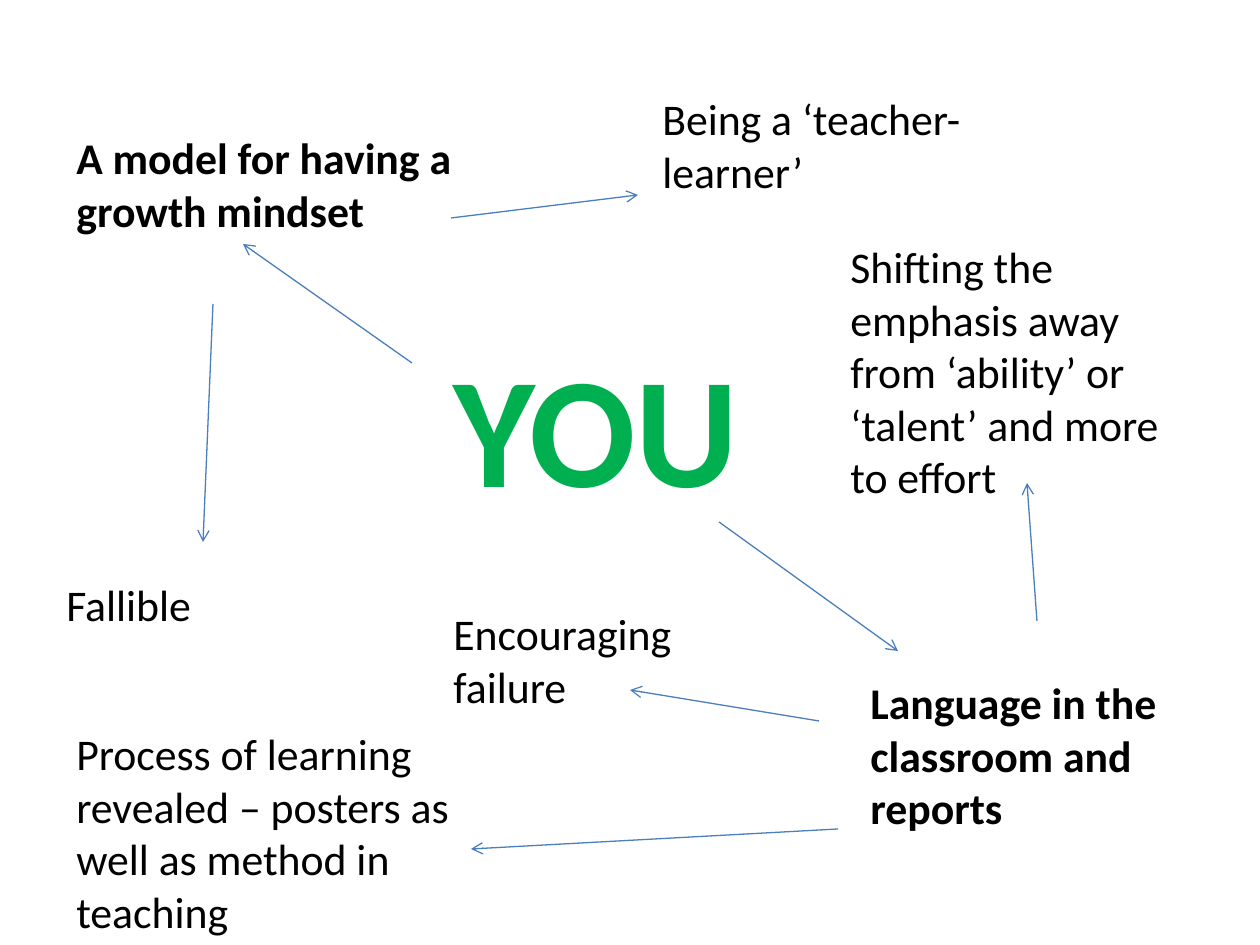
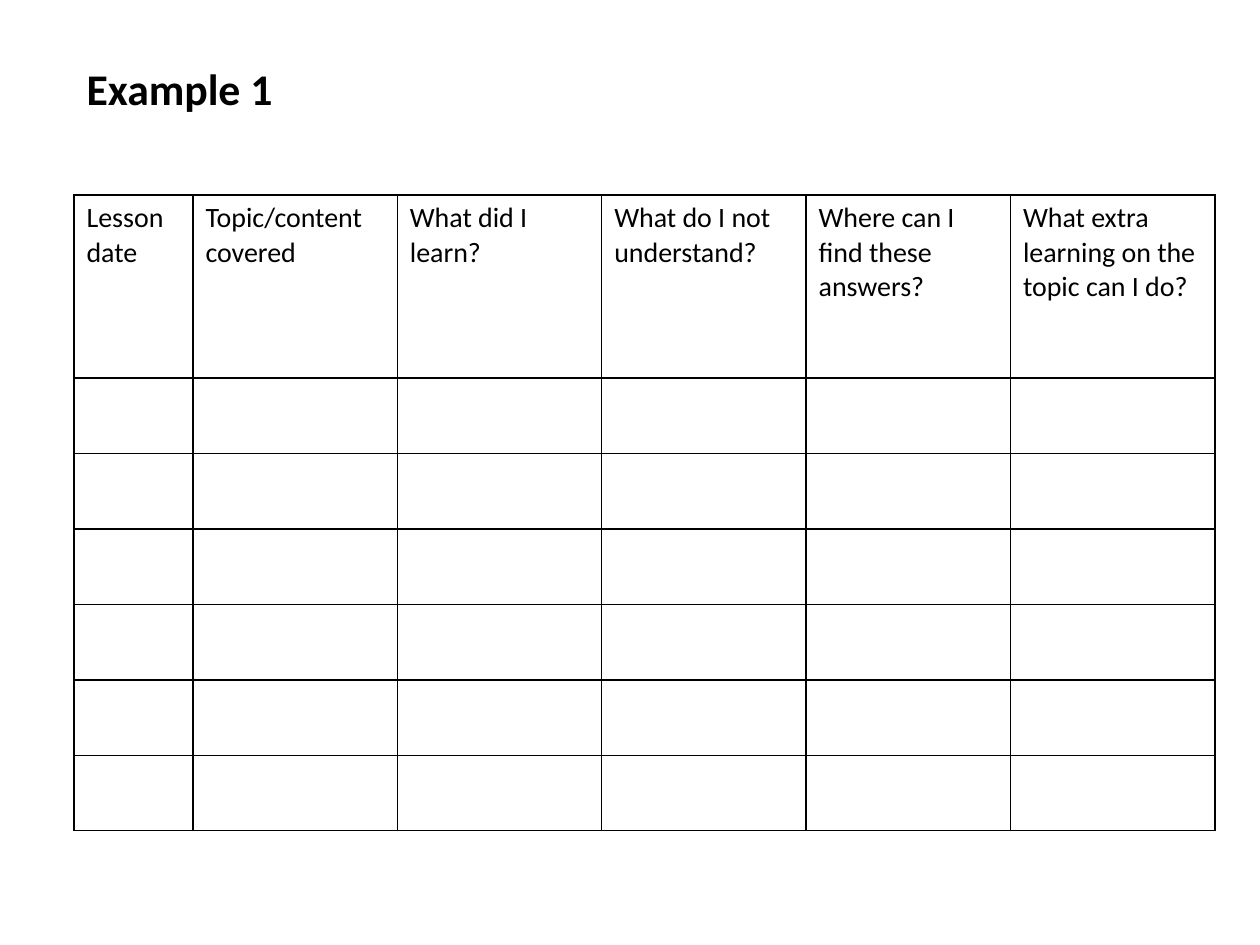
import dataclasses

import lxml.etree
import pptx
import pptx.dml.color
import pptx.enum.shapes
import pptx.enum.text
import pptx.oxml.ns
import pptx.util

PX = 914400 / 126
PAGE_SIZE = (1260, 945)
TITLE_ONLY, BLANK = 5, 6


@dataclasses.dataclass(frozen=True)
class Theme:
    font: str = "Calibri"
    ink: str = "000000"
    accent: str = "00B050"
    arrow: str = "4B7EBC"
    hero_size: int = 90
    body_size: int = 25
    table_size: int = 16
    arrow_width: float = 0.75
    border_width: float = 1


THEME = Theme()

HERO = ("YOU", (441, 324, 348, 204))
THEMES = [
    ("A model for having a growth mindset", (64, 125, 466, 118)),
    ("Language in the classroom and reports", (858, 670, 348, 171)),
]
IDEAS = [
    ("Being a ‘teacher-learner’", (650, 86, 367, 118)),
    ("Fallible", (54, 572, 456, 66)),
    ("Shifting the emphasis away from ‘ability’ or ‘talent’ and more to effort",
     (838, 234, 357, 277)),
    ("Encouraging failure", (441, 601, 258, 118)),
    ("Process of learning revealed – posters as well as method in teaching",
     (64, 721, 441, 224)),
]
ARROWS = [
    ((412, 363), (243, 244)),
    ((451, 218), (638, 195)),
    ((213, 304), (203, 542)),
    ((719, 522), (898, 651)),
    ((1037, 621), (1027, 483)),
    ((819, 721), (630, 690)),
    ((838, 829), (471, 849)),
]

TITLE = ("Example 1", (74, 55, 953, 66))
HEADINGS = [
    "Lesson date", "Topic/content covered", "What did I learn?",
    "What do I not understand?", "Where can I find these answers?",
    "What extra learning on the topic can I do?",
]
EMPTY_ROWS = 6
TABLE_AREA = (74, 195, 1141, 636)
DATE_WIDTH, HEADING_HEIGHT = 119, 183


def emu(*lengths):
    return [pptx.util.Emu(round(length * PX)) for length in lengths]


def rgb(color):
    return pptx.dml.color.RGBColor.from_string(color)


def add_xml(parent, tag, **attributes):
    return lxml.etree.SubElement(parent, pptx.oxml.ns.qn(tag), attributes)


def write(frame, text, size=THEME.body_size, color=THEME.ink, bold=False):
    para = frame.paragraphs[0]
    para.alignment = pptx.enum.text.PP_ALIGN.LEFT
    span = para.add_run()
    span.text = text
    span.font.name = THEME.font
    span.font.size = pptx.util.Pt(size)
    span.font.bold = bold
    span.font.color.rgb = rgb(color)


def fill_box(box, text, **style):
    frame = box.text_frame
    frame.word_wrap = True
    frame.auto_size = pptx.enum.text.MSO_AUTO_SIZE.SHAPE_TO_FIT_TEXT
    frame.vertical_anchor = pptx.enum.text.MSO_ANCHOR.TOP
    write(frame, text, **style)


def add_text(page, text, area, **style):
    fill_box(page.shapes.add_textbox(*emu(*area)), text, **style)


def add_arrow(page, start, end):
    arrow = page.shapes.add_connector(
        pptx.enum.shapes.MSO_CONNECTOR.STRAIGHT, *emu(*start, *end))
    arrow.line.color.rgb = rgb(THEME.arrow)
    arrow.line.width = pptx.util.Pt(THEME.arrow_width)
    properties = arrow.element.spPr
    add_xml(properties.find(pptx.oxml.ns.qn("a:ln")), "a:tailEnd", type="arrow")
    add_xml(properties, "a:effectLst")


def outline_cell(cell):
    properties = cell._tc.get_or_add_tcPr()
    for side in "LRTB":
        border = add_xml(properties, f"a:ln{side}",
                         w=str(pptx.util.Pt(THEME.border_width)))
        add_xml(add_xml(border, "a:solidFill"), "a:srgbClr", val=THEME.ink)
    cell.fill.background()


def add_mindset_page(deck):
    page = deck.slides.add_slide(deck.slide_layouts[BLANK])
    add_text(page, *HERO, size=THEME.hero_size, color=THEME.accent, bold=True)
    for text, area in THEMES:
        add_text(page, text, area, bold=True)
    for text, area in IDEAS:
        add_text(page, text, area)
    for start, end in ARROWS:
        add_arrow(page, start, end)


def add_example_page(deck):
    page = deck.slides.add_slide(deck.slide_layouts[TITLE_ONLY])
    text, area = TITLE
    title = page.shapes.title
    title.left, title.top, title.width, title.height = emu(*area)
    fill_box(title, text, bold=True)

    table = page.shapes.add_table(
        EMPTY_ROWS + 1, len(HEADINGS), *emu(*TABLE_AREA)).table
    table.first_row = table.horz_banding = False
    width, height = TABLE_AREA[2:]
    question_width = (width - DATE_WIDTH) / (len(HEADINGS) - 1)
    row_height = (height - HEADING_HEIGHT) / EMPTY_ROWS
    for index, column in enumerate(table.columns):
        column.width = emu(question_width if index else DATE_WIDTH)[0]
    for index, row in enumerate(table.rows):
        row.height = emu(row_height if index else HEADING_HEIGHT)[0]
    for cell in table.iter_cells():
        outline_cell(cell)
    for cell, heading in zip(table.rows[0].cells, HEADINGS):
        write(cell.text_frame, heading, size=THEME.table_size)


def main():
    deck = pptx.Presentation()
    deck.slide_width, deck.slide_height = emu(*PAGE_SIZE)
    add_mindset_page(deck)
    add_example_page(deck)
    deck.save("out.pptx")


if __name__ == "__main__":
    main()
